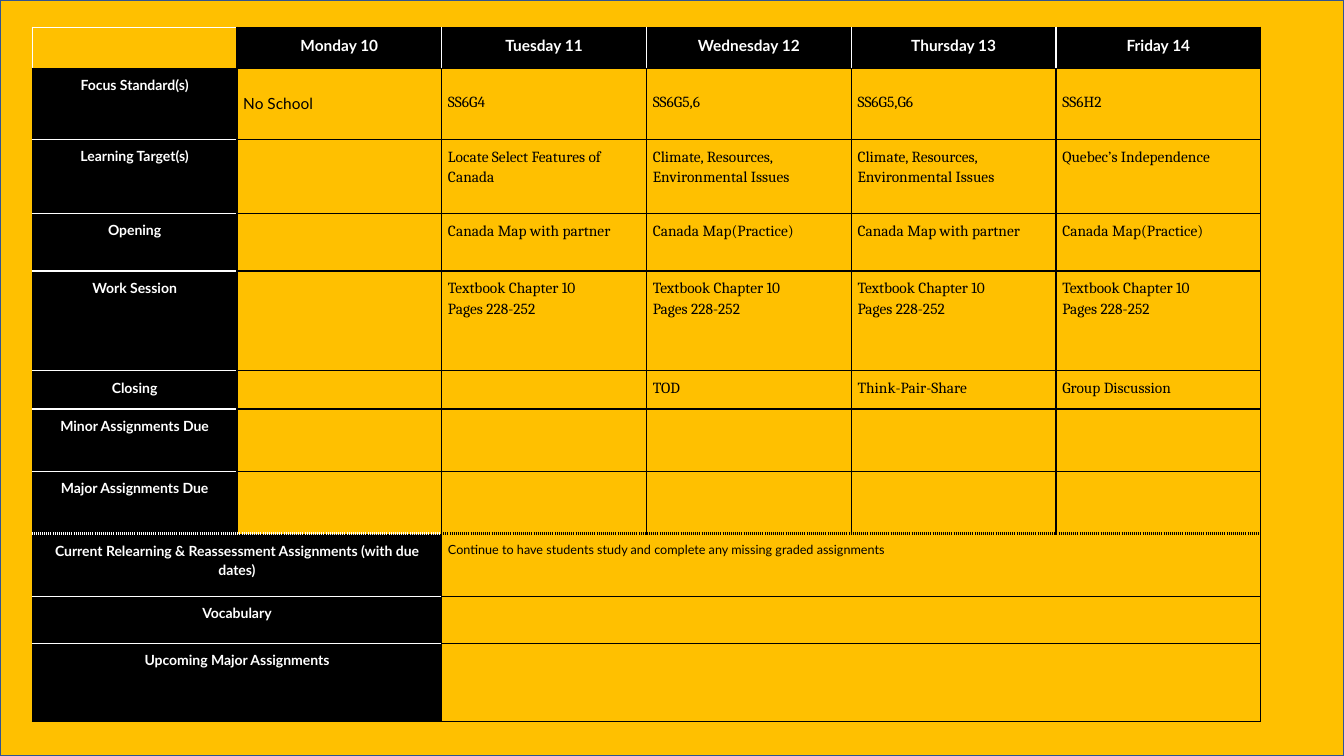
"""Weekly lesson plan slide: one bordered table on a yellow ground."""
from lxml import etree
from pptx import Presentation
from pptx.dml.color import RGBColor
from pptx.enum import shapes, text
from pptx.oxml.ns import qn
from pptx.util import Pt

BLACK = RGBColor(0x00, 0x00, 0x00)
WHITE = RGBColor(0xFF, 0xFF, 0xFF)
YELLOW = RGBColor(0xFF, 0xC0, 0x00)
BLUE = RGBColor(0x32, 0x54, 0x91)

COLUMNS = 6
COLUMN_WIDTH = 146.28
INSET = 4.5
FOCUS_ROW, LAST_DAY_ROW = 1, 7
CHAPTER = "Textbook Chapter 10\nPages 228-252"
ISSUES = "Climate, Resources, Environmental Issues"

ROWS = [
    (29.3, ["", "Monday 10", "Tuesday 11", "Wednesday 12", "Thursday 13", "Friday 14"]),
    (50.8, ["Focus Standard(s)", "No School", "SS6G4", "SS6G5,6", "SS6G5,G6", "SS6H2"]),
    (52.8, ["Learning Target(s)", "", "Locate Select Features of Canada", ISSUES, ISSUES,
            "Quebec’s Independence"]),
    (41.3, ["Opening", "", "Canada Map with partner", "Canada Map(Practice)",
            "Canada Map with partner", "Canada Map(Practice)"]),
    (71.1, ["Work Session", "", CHAPTER, CHAPTER, CHAPTER, CHAPTER]),
    (27.5, ["Closing", "", "", "TOD", "Think-Pair-Share", "Group Discussion"]),
    (44.6, ["Minor Assignments Due", "", "", "", "", ""]),
    (44.6, ["Major Assignments Due", "", "", "", "", ""]),
    (44.6, ["Current Relearning & Reassessment Assignments (with due dates)", "",
            "Continue to have students study and complete any missing graded assignments",
            "", "", ""]),
    (33.5, ["Vocabulary", "", "", "", "", ""]),
    (55.8, ["Upcoming Major Assignments", "", "", "", "", ""]),
]


def set_borders(cell, borders):
    tcPr = cell._tc.get_or_add_tcPr()
    for i, (side, (color, width, dash)) in enumerate(borders.items()):
        ln = etree.Element(qn(f"a:ln{side}"), w=str(Pt(width)))
        fill = etree.SubElement(ln, qn("a:solidFill"))
        etree.SubElement(fill, qn("a:srgbClr"), val=str(color))
        etree.SubElement(ln, qn("a:prstDash"), val=dash)
        tcPr.insert(i, ln)


prs = Presentation()
prs.slide_width, prs.slide_height = Pt(960), Pt(540)
s = prs.slides.add_slide(prs.slide_layouts[6])

sp = s.shapes.add_shape(shapes.MSO_SHAPE.RECTANGLE, 0, 0, prs.slide_width, prs.slide_height)
sp.shadow.inherit = False
sp.fill.solid()
sp.fill.fore_color.rgb = YELLOW
sp.line.color.rgb = BLUE
sp.line.width = Pt(1)

table = s.shapes.add_table(len(ROWS), COLUMNS, Pt(23), Pt(19.4), Pt(COLUMN_WIDTH * COLUMNS),
                           Pt(sum(height for height, _ in ROWS))).table
table.first_row = False
table.horz_banding = False
for column in table.columns:
    column.width = Pt(COLUMN_WIDTH)

for row, (height, words) in enumerate(ROWS):
    table.rows[row].height = Pt(height)
    summary = row > LAST_DAY_ROW
    if summary:
        table.cell(row, 0).merge(table.cell(row, 1))
        table.cell(row, 2).merge(table.cell(row, COLUMNS - 1))
    for col, word in enumerate(words):
        cell = table.cell(row, col)
        header = row == 0 and col > 0
        label = row > 0 and (col == 0 or summary and col == 1)
        corner = row == 0 and col == 0
        if header or label:
            cell.fill.solid()
            cell.fill.fore_color.rgb = BLACK
        else:
            cell.fill.background()

        above = (2.25, "sysDot") if row == LAST_DAY_ROW + 1 else (1, "solid")
        below = (2.25, "sysDot") if row == LAST_DAY_ROW else (1, "solid")
        white = {
            "L": corner or header and col > 1,
            "R": header and col < COLUMNS - 1,
            "T": corner or label and row > 1,
            "B": label and row < len(ROWS) - 1,
        }
        styles = {"L": (1, "solid"), "R": (1, "solid"), "T": above, "B": below}
        set_borders(cell, {side: (WHITE if white[side] else BLACK, *styles[side])
                           for side in styles})

        inset = Pt(INSET if word else 0)
        cell.margin_left = cell.margin_right = cell.margin_top = cell.margin_bottom = inset
        if not word:
            continue
        if row == FOCUS_ROW and not label:
            cell.margin_top = Pt(INSET + 12)
        cell.text_frame.text = word
        for p in cell.text_frame.paragraphs:
            p.line_spacing = 1.15
            p.alignment = text.PP_ALIGN.CENTER if header or label else text.PP_ALIGN.LEFT
            font = p.runs[0].font
            font.name = "Lato" if header or label or summary or col == 1 else "Cambria"
            font.size = Pt(10 if label else 9 if summary else 11)
            font.bold = header or label
            font.color.rgb = WHITE if header or label else BLACK

prs.save("out.pptx")
